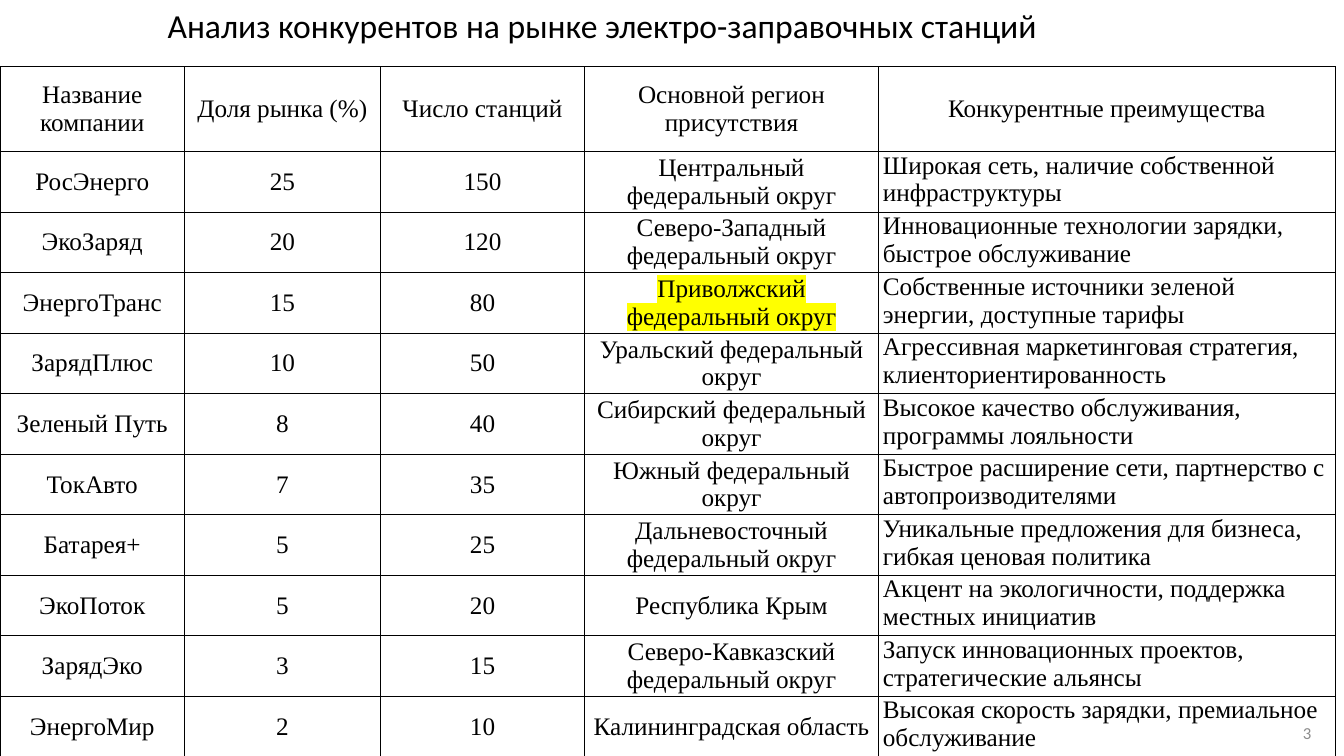
from lxml import etree
from pptx import Presentation
from pptx.dml.color import RGBColor
from pptx.enum.text import MSO_ANCHOR, MSO_AUTO_SIZE, PP_ALIGN
from pptx.oxml import parse_xml
from pptx.oxml.ns import nsdecls, qn
from pptx.util import Cm, Pt

LEFT, CENTER, RIGHT = PP_ALIGN.LEFT, PP_ALIGN.CENTER, PP_ALIGN.RIGHT
TOP, MIDDLE = MSO_ANCHOR.TOP, MSO_ANCHOR.MIDDLE
BLACK = RGBColor(0x00, 0x00, 0x00)
GRAY = RGBColor(0x8C, 0x8C, 0x8C)
YELLOW = RGBColor(0xFF, 0xFF, 0x00)

HEADER = ["Название компании", "Доля рынка (%)", "Число станций",
          "Основной регион присутствия", "Конкурентные преимущества"]
COMPETITORS = [
    ["РосЭнерго", 25, 150, "Центральный федеральный округ",
     "Широкая сеть, наличие собственной инфраструктуры"],
    ["ЭкоЗаряд", 20, 120, "Северо-Западный федеральный округ",
     "Инновационные технологии зарядки, быстрое обслуживание"],
    ["ЭнергоТранс", 15, 80, "Приволжский федеральный округ",
     "Собственные источники зеленой энергии, доступные тарифы"],
    ["ЗарядПлюс", 10, 50, "Уральский федеральный округ",
     "Агрессивная маркетинговая стратегия, клиенториентированность"],
    ["Зеленый Путь", 8, 40, "Сибирский федеральный округ",
     "Высокое качество обслуживания, программы лояльности"],
    ["ТокАвто", 7, 35, "Южный федеральный округ",
     "Быстрое расширение сети, партнерство с автопроизводителями"],
    ["Батарея+", 5, 25, "Дальневосточный федеральный округ",
     "Уникальные предложения для бизнеса, гибкая ценовая политика"],
    ["ЭкоПоток", 5, 20, "Республика Крым",
     "Акцент на экологичности, поддержка местных инициатив"],
    ["ЗарядЭко", 3, 15, "Северо-Кавказский федеральный округ",
     "Запуск инновационных проектов, стратегические альянсы"],
    ["ЭнергоМир", 2, 10, "Калининградская область",
     "Высокая скорость зарядки, премиальное обслуживание"],
]
HIGHLIGHTED_REGION = "Приволжский федеральный округ"
COLUMN_WIDTHS = [4.65, 4.93, 5.16, 7.39, 11.53]
HEADER_HEIGHT, ROW_HEIGHT = 2.14, 1.52


def write(frame, text, align, font_name, size, color):
    frame.text = text
    paragraph = frame.paragraphs[0]
    paragraph.alignment = align
    font = paragraph.runs[0].font
    font.name, font.size, font.bold = font_name, Pt(size), False
    font.color.rgb = color
    return paragraph.runs[0]


def add_label(left, top, width, height, anchor, text, align, size, color):
    frame = slide.shapes.add_textbox(Cm(left), Cm(top), Cm(width), Cm(height)).text_frame
    frame.word_wrap = True
    frame.vertical_anchor = anchor
    write(frame, text, align, "Calibri", size, color)
    return frame


presentation = Presentation()
presentation.slide_width, presentation.slide_height = Cm(33.87), Cm(19.05)
slide = presentation.slides.add_slide(presentation.slide_layouts[6])

title = add_label(0.38, 0, 29.6, 1.28, TOP,
                  "Анализ конкурентов на рынке электро-заправочных станций",
                  CENTER, 24, BLACK)
title.auto_size = MSO_AUTO_SIZE.SHAPE_TO_FIT_TEXT

rows = [HEADER] + COMPETITORS
row_heights = [HEADER_HEIGHT] + [ROW_HEIGHT] * len(COMPETITORS)
table = slide.shapes.add_table(len(rows), len(HEADER), Cm(0), Cm(1.68),
                               Cm(sum(COLUMN_WIDTHS)), Cm(sum(row_heights))).table
table.first_row = table.horz_banding = False
for column, width in zip(table.columns, COLUMN_WIDTHS):
    column.width = Cm(width)

for row_index, values in enumerate(rows):
    table.rows[row_index].height = Cm(row_heights[row_index])
    for column_index, value in enumerate(values):
        is_advantage = row_index > 0 and column_index == len(HEADER) - 1
        cell = table.cell(row_index, column_index)
        cell.margin_left = cell.margin_right = Cm(0.12)
        cell.margin_top = cell.margin_bottom = Cm(0)
        cell.vertical_anchor = TOP if is_advantage else MIDDLE
        cell.fill.background()
        run = write(cell.text_frame, str(value), LEFT if is_advantage else CENTER,
                    "Times New Roman", 18, BLACK)
        if value == HIGHLIGHTED_REGION:
            highlight = etree.Element(qn("a:highlight"))
            etree.SubElement(highlight, qn("a:srgbClr"), val=str(YELLOW))
            run.font._element.find(qn("a:solidFill")).addnext(highlight)
        properties = cell._tc.get_or_add_tcPr()
        for position, side in enumerate("LRTB"):
            properties.insert(position, parse_xml(
                f'<a:ln{side} {nsdecls("a")} w="{Pt(1)}"><a:solidFill>'
                f'<a:srgbClr val="{BLACK}"/></a:solidFill></a:ln{side}>'))

add_label(23.93, 17.86, 9.37, 1.19, MIDDLE, "3", RIGHT, 12, GRAY)

presentation.save("out.pptx")
